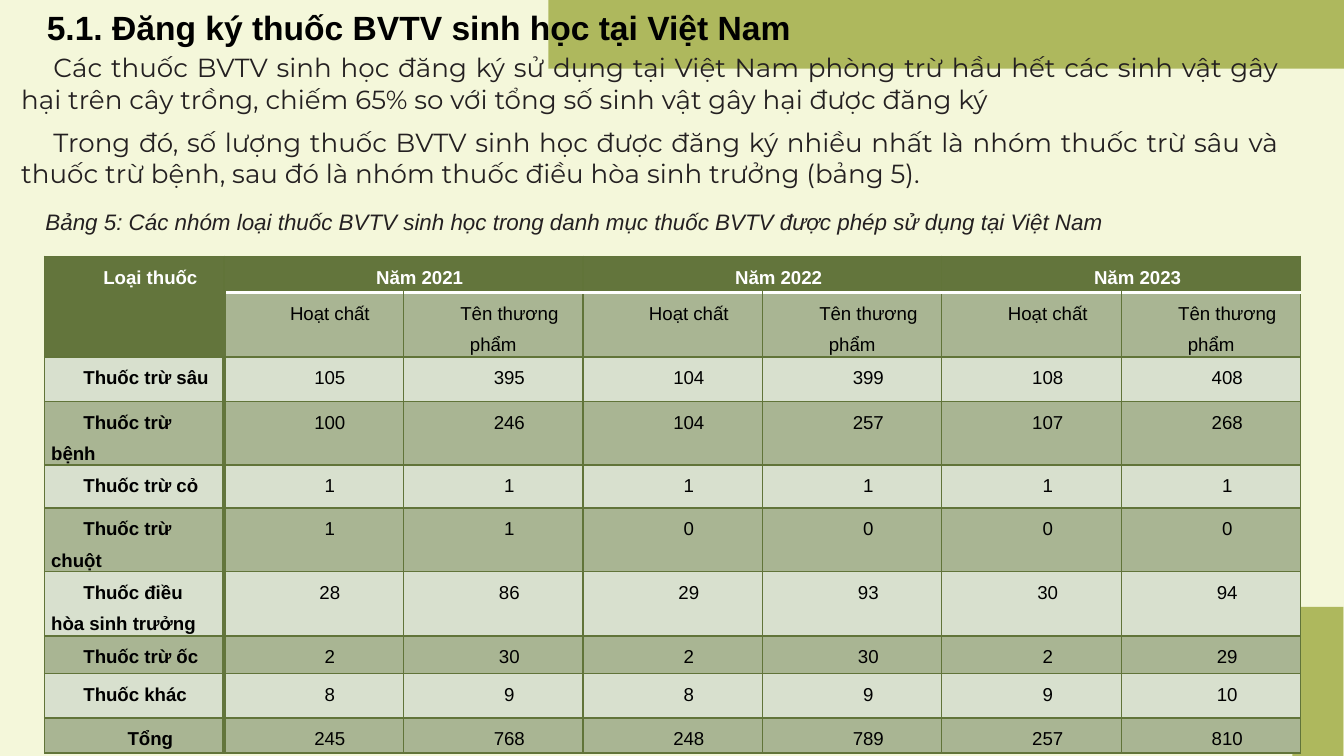
"""Build the slide on registered biological pesticides in Vietnam."""
from dataclasses import dataclass

from lxml.etree import SubElement
from pptx import Presentation
from pptx.dml.color import RGBColor as Color
from pptx.enum.shapes import MSO_SHAPE as Preset
from pptx.enum.text import MSO_AUTO_SIZE as AutoSize, PP_ALIGN as Align
from pptx.oxml.ns import qn
from pptx.util import Pt


@dataclass(frozen=True)
class Theme:
    background: str = "F4F7DA"
    accent: str = "7C8C03"
    accent_alpha: int = 58
    header: str = "63753C"
    dark_band: str = "A9B593"
    light_band: str = "D8E0CE"
    grid: str = "617439"
    white: str = "FFFFFF"
    black: str = "000000"
    ink: str = "242021"
    sans: str = "Arial"
    body: str = "Montserrat"
    title_size: float = 18
    body_size: float = 14
    caption_size: float = 12
    table_size: float = 10
    thin: float = 0.75
    thick: float = 2
    indent: float = 17.3
    leading: float = 17
    gap: float = 6


@dataclass(frozen=True)
class Block:
    left: float
    top: float
    width: float
    height: float
    rotation: float = 0


@dataclass(frozen=True)
class TextBlock:
    area: Block
    paragraphs: tuple
    style: dict


THEME = Theme()
BANDS = (Block(666, 351.4, 79.9, 27.4, 90), Block(293.8, 0, 426.2, 36.8))
TEXTS = (
    TextBlock(
        Block(0, 105.1, 705.6, 23),
        ("Bảng 5: Các nhóm loại thuốc BVTV sinh học trong danh mục thuốc BVTV được phép sử dụng tại Việt Nam",),
        dict(size=THEME.caption_size, color=THEME.ink, italic=True),
    ),
    TextBlock(
        Block(18, 0, 640, 28.8),
        ("5.1. Đăng ký thuốc BVTV sinh học tại Việt Nam",),
        dict(size=THEME.title_size, bold=True, spaced=False),
    ),
    TextBlock(
        Block(4.3, 23.8, 688.3, 81.4),
        (
            "Các thuốc BVTV sinh học đăng ký sử dụng tại Việt Nam phòng trừ hầu hết các sinh vật gây hại "
            "trên cây trồng, chiếm 65% so với tổng số sinh vật gây hại được đăng ký",
            "Trong đó, số lượng thuốc BVTV sinh học được đăng ký nhiều nhất là nhóm thuốc trừ sâu và thuốc "
            "trừ bệnh, sau đó là nhóm thuốc điều hòa sinh trưởng (bảng 5).",
        ),
        dict(size=THEME.body_size, font=THEME.body, color=THEME.ink),
    ),
)
TABLE_AREA = Block(23.8, 137.3, 673.2, 262.3)
ROW_HEIGHTS = (19.4, 34.6, 23.8, 23.8, 23, 24.5, 34.6, 20.2, 23.8, 18.7)
ROWS = (
    ("Loại thuốc", "Năm 2021", "", "Năm 2022", "", "Năm 2023", ""),
    ("",) + ("Hoạt chất", "Tên thương phẩm") * 3,
    ("Thuốc trừ sâu", 105, 395, 104, 399, 108, 408),
    ("Thuốc trừ bệnh", 100, 246, 104, 257, 107, 268),
    ("Thuốc trừ cỏ", 1, 1, 1, 1, 1, 1),
    ("Thuốc trừ chuột", 1, 1, 0, 0, 0, 0),
    ("Thuốc điều hòa sinh trưởng", 28, 86, 29, 93, 30, 94),
    ("Thuốc trừ ốc", 2, 30, 2, 30, 2, 29),
    ("Thuốc khác", 8, 9, 8, 9, 9, 10),
    ("Tổng", 245, 768, 248, 789, 257, 810),
)


def write(para, text: str, *, size: float, font: str = THEME.sans, color: str = THEME.black,
          bold: bool = False, italic: bool = False, align=Align.JUSTIFY, spaced: bool = True) -> None:
    """Write one formatted run into a paragraph."""
    para.alignment = align
    if spaced:
        para.line_spacing, para.space_after = Pt(THEME.leading), Pt(THEME.gap)
        properties = para._p.get_or_add_pPr()
        properties.set("marL", "0")
        properties.set("indent", str(Pt(THEME.indent)))
    span = para.add_run()
    span.text = text
    span.font.name, span.font.size = font, Pt(size)
    span.font.bold, span.font.italic = bold, italic
    span.font.color.rgb = Color.from_string(color)


def place(area: Block) -> tuple:
    """Return the area as lengths in points."""
    return Pt(area.left), Pt(area.top), Pt(area.width), Pt(area.height)


def add_band(page, area: Block) -> None:
    """Add a translucent accent rectangle."""
    band = page.shapes.add_shape(Preset.RECTANGLE, *place(area))
    band.rotation = area.rotation
    band.shadow.inherit = False
    band.line.fill.background()
    band.fill.solid()
    band.fill.fore_color.rgb = Color.from_string(THEME.accent)
    tint = band._element.spPr.find(qn("a:solidFill"))[0]
    SubElement(tint, qn("a:alpha"), val=str(THEME.accent_alpha * 1000))


def add_text(page, block: TextBlock) -> None:
    """Add a wrapped text box."""
    frame = page.shapes.add_textbox(*place(block.area)).text_frame
    frame.word_wrap = True
    frame.auto_size = AutoSize.SHAPE_TO_FIT_TEXT
    for index, text in enumerate(block.paragraphs):
        para = frame.add_paragraph() if index else frame.paragraphs[0]
        write(para, text, **block.style)


def set_borders(cell, row: int, column: int) -> None:
    """Rule the four sides of a table cell."""
    grid = (THEME.grid, THEME.thin)
    under_header = (THEME.white, THEME.thick)
    beside_labels = (THEME.header, THEME.thick)
    sides = {
        "a:lnL": beside_labels if column == 1 and row else grid,
        "a:lnR": beside_labels if column == 0 and row else grid,
        "a:lnT": under_header if row == 1 and column else grid,
        "a:lnB": under_header if row == 0 and column else grid,
    }
    properties = cell._tc.get_or_add_tcPr()
    for index, (side, (color, width)) in enumerate(sides.items()):
        line = SubElement(properties, qn(side), w=str(Pt(width)))
        SubElement(SubElement(line, qn("a:solidFill")), qn("a:srgbClr"), val=color)
        properties.insert(index, line)


def fill_cell(cell, row: int, column: int, text: str) -> None:
    """Format one table cell and write its text."""
    heading = row == 0 or (row == 1 and column == 0)
    band = THEME.dark_band if row % 2 else THEME.light_band
    cell.fill.solid()
    cell.fill.fore_color.rgb = Color.from_string(THEME.header if heading else band)
    cell.margin_left = cell.margin_right = Pt(3.6)
    cell.margin_top = cell.margin_bottom = Pt(0)
    set_borders(cell, row, column)
    if text:
        label = column == 0 and 0 < row < len(ROWS) - 1
        write(cell.text_frame.paragraphs[0], text, size=THEME.table_size,
              color=THEME.white if heading else THEME.black, bold=heading or column == 0,
              align=Align.LEFT if label else Align.CENTER)


def add_pesticide_table(page) -> None:
    """Add the table of pesticide groups by year."""
    count = len(ROWS[0])
    table = page.shapes.add_table(len(ROWS), count, *place(TABLE_AREA)).table
    table.first_row = table.horz_banding = False
    for column in table.columns:
        column.width = Pt(round(TABLE_AREA.width / count, 2))
    for row, height in zip(table.rows, ROW_HEIGHTS):
        row.height = Pt(height)
    for row, values in enumerate(ROWS):
        for column, value in enumerate(values):
            fill_cell(table.cell(row, column), row, column, str(value))
    table.cell(0, 0).merge(table.cell(1, 0))
    for column in range(1, count, 2):
        table.cell(0, column).merge(table.cell(0, column + 1))


def main() -> None:
    """Build and save the deck."""
    deck = Presentation()
    deck.slide_width, deck.slide_height = Pt(720), Pt(405)
    page = deck.slides.add_slide(deck.slide_layouts[6])
    page.background.fill.solid()
    page.background.fill.fore_color.rgb = Color.from_string(THEME.background)
    for area in BANDS:
        add_band(page, area)
    add_pesticide_table(page)
    for block in TEXTS:
        add_text(page, block)
    deck.save("out.pptx")


if __name__ == "__main__":
    main()
